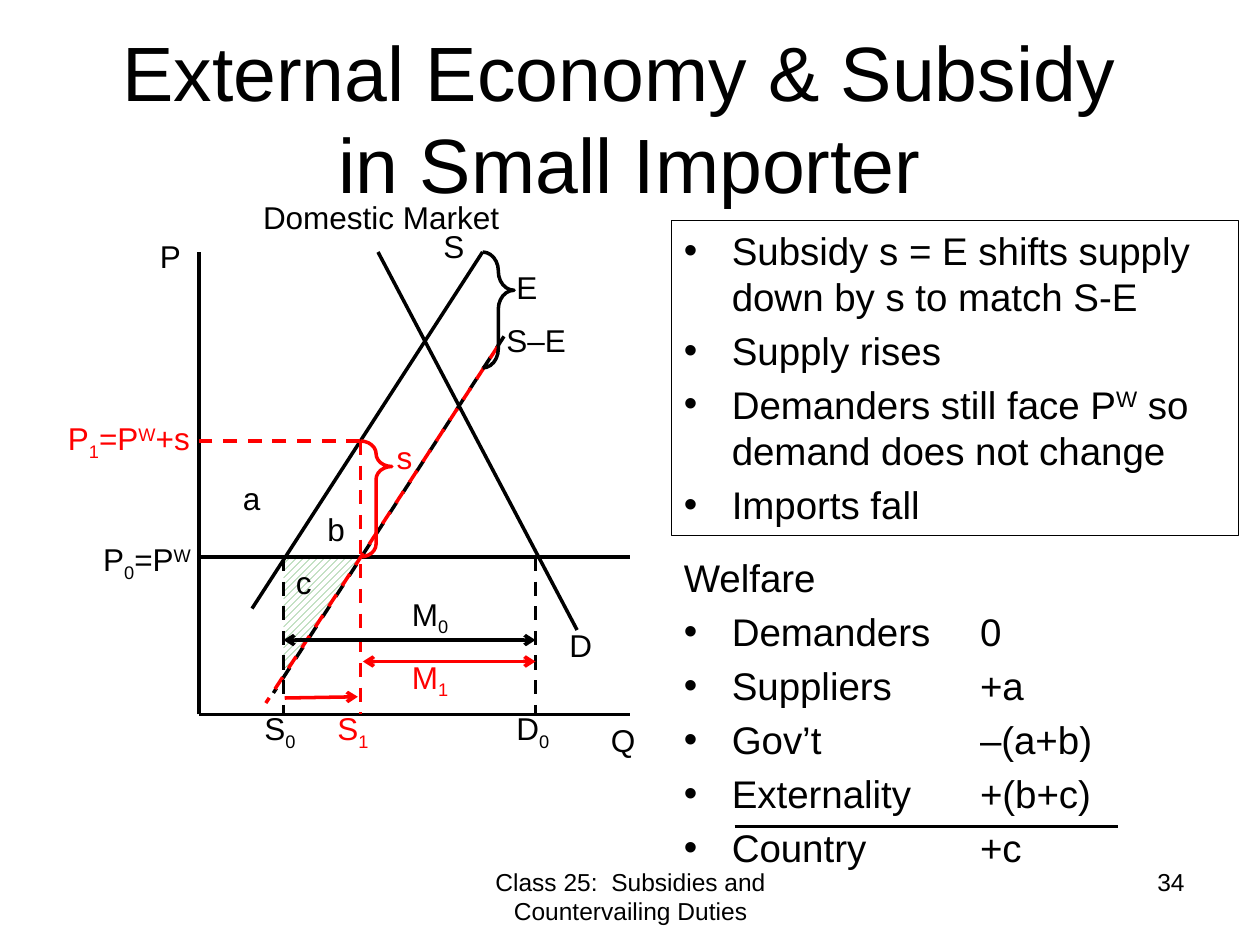
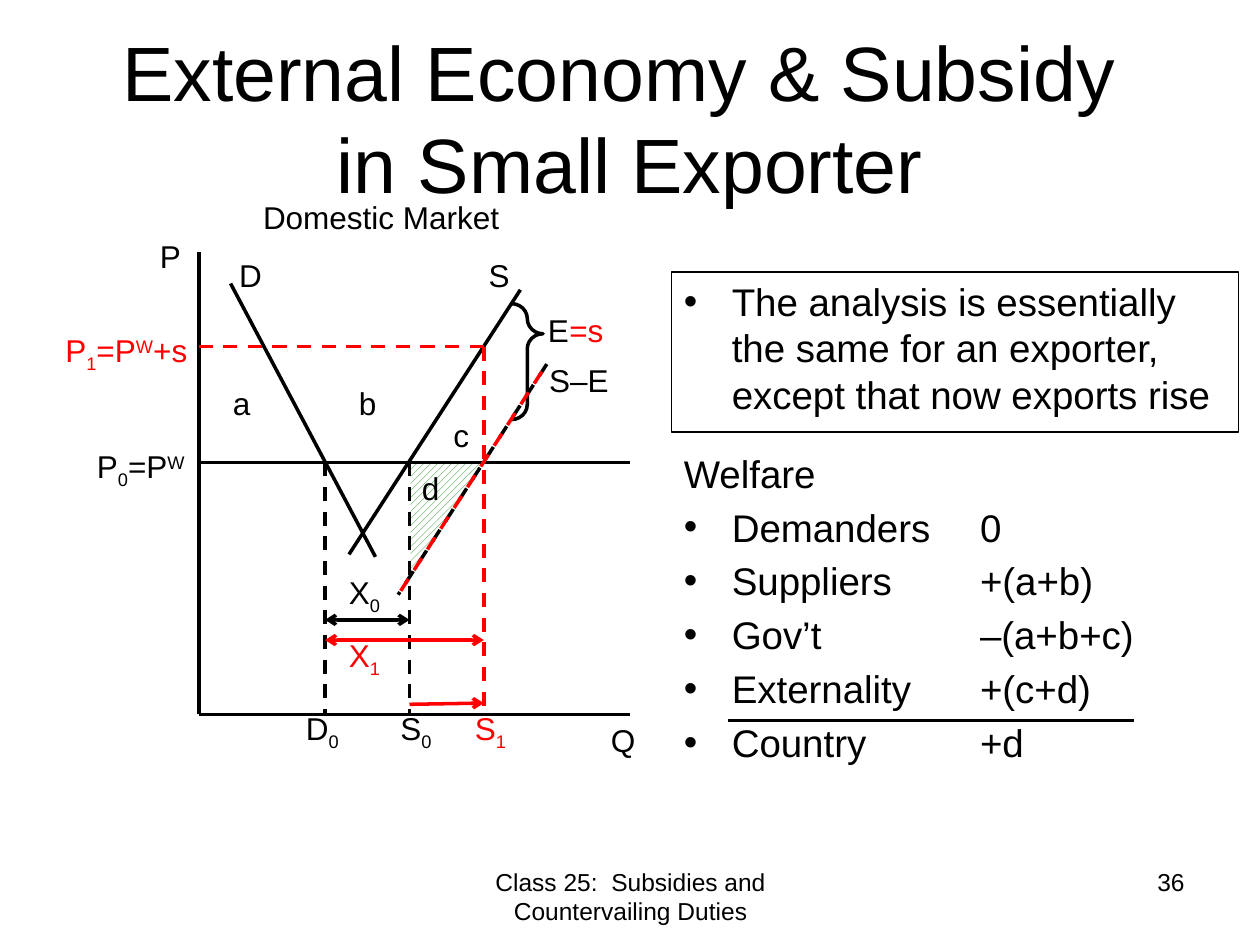
import lxml.etree
import pptx
import pptx.dml.color
import pptx.enum.dml
import pptx.enum.shapes
import pptx.enum.text
import pptx.oxml.ns
import pptx.util

Inches = pptx.util.Inches
Pt = pptx.util.Pt
qn = pptx.oxml.ns.qn
SHAPES = pptx.enum.shapes.MSO_SHAPE
ALIGN = pptx.enum.text.PP_ALIGN

COLORS = {"black": "000000", "red": "FF0000", "green": "008000", "white": "FFFFFF"}
FONT = "Arial"
BASELINES = {"_": "-25000", "^": "30000"}
INDENT = Inches(0.38)
AMOUNT_TAB = Inches(2.35)
ORIGIN_X, AXIS_TOP, AXIS_Y, AXIS_RIGHT = 1.58, 2, 5.67, 5
QUANTITY_Y = 5.58


def color(name):
    return pptx.dml.color.RGBColor.from_string(COLORS[name])


def add_xml(parent, tag, **attributes):
    return lxml.etree.SubElement(parent, qn(tag), attributes)


def split_scripts(text):
    """Yield (piece, baseline); "_" lowers and "^" raises the next character."""
    piece, baseline = "", None
    for character in text:
        if character in BASELINES:
            yield piece, None
            piece, baseline = "", BASELINES[character]
        elif baseline:
            yield character, baseline
            baseline = None
        else:
            piece += character
    if piece:
        yield piece, None


def write(paragraph, text, size=18, ink="black", align=ALIGN.LEFT, bullet=False, before=0):
    paragraph.alignment = align
    paragraph.space_before = Pt(before)
    for number, line in enumerate(text.split("\n")):
        if number:
            paragraph.add_line_break()
        for piece, baseline in split_scripts(line):
            run = paragraph.add_run()
            run.text = piece
            run.font.name = FONT
            run.font.size = Pt(size)
            run.font.color.rgb = color(ink)
            if baseline:
                run.font._element.set("baseline", baseline)
    if bullet:
        properties = paragraph._p.get_or_add_pPr()
        properties.set("marL", str(INDENT))
        properties.set("indent", str(-INDENT))
        add_xml(properties, "a:buFont", typeface=FONT)
        add_xml(properties, "a:buChar", char="•")
        if "\t" in text:
            tabs = add_xml(properties, "a:tabLst")
            add_xml(tabs, "a:tab", pos=str(AMOUNT_TAB), algn="l")


class MarketSlide:
    def __init__(self, presentation, title, number):
        self.slide = presentation.slides.add_slide(presentation.slide_layouts[6])
        self.text(title, 0.5, 0.3, 9, 1.25, size=44, align=ALIGN.CENTER, middle=True)
        self.text("Domestic Market", 1.63, 1.52, 2.79, align=ALIGN.CENTER)
        self.text("Class 25:  Subsidies and Countervailing Duties", 3.42, 6.83, 3.17, 0.52,
                  size=14, align=ALIGN.CENTER)
        self.text(str(number), 7.17, 6.83, 2.33, 0.52, size=14, align=ALIGN.RIGHT)

    def text(self, text, left, top, width=0.5, height=0.4, middle=False, wrap=True, **style):
        box = self.slide.shapes.add_textbox(*map(Inches, (left, top, width, height)))
        frame = box.text_frame
        frame.word_wrap = wrap
        if middle:
            frame.vertical_anchor = pptx.enum.text.MSO_ANCHOR.MIDDLE
        write(frame.paragraphs[0], text, **style)

    def areas(self, **places):
        """Letter the areas between the curves."""
        for letter, (left, top) in places.items():
            self.text(letter, left, top, 0.33)

    def quantity(self, text, left, top=QUANTITY_Y, ink="black"):
        width = {"S": 0.46, "D": 0.48, "M": 0.51, "X": 0.46}[text[0]]
        self.text(text, left, top, width, wrap=False, ink=ink)

    def line(self, x1, y1, x2, y2, ink="black", dash=False, arrows=()):
        """Draw a line; arrows holds "headEnd" for the start and "tailEnd" for the end."""
        connector = self.slide.shapes.add_connector(
            pptx.enum.shapes.MSO_CONNECTOR.STRAIGHT, *map(Inches, (x1, y1, x2, y2)))
        connector.line.color.rgb = color(ink)
        connector.line.width = Pt(2)
        if dash:
            connector.line.dash_style = pptx.enum.dml.MSO_LINE.DASH
        for end in arrows:
            add_xml(connector.line._get_or_add_ln(), "a:" + end, type="arrow")
        add_xml(connector._element.spPr, "a:effectLst")

    def span(self, x1, x2, y, ink="black"):
        self.line(x1, y, x2, y, ink, arrows=("headEnd", "tailEnd"))

    def shape(self, kind, left, top, width, height):
        shape = self.slide.shapes.add_shape(kind, *map(Inches, (left, top, width, height)))
        shape.shadow.inherit = False
        shape.fill.background()
        shape.line.fill.background()
        return shape

    def hatched_triangle(self, left, top, width, height):
        triangle = self.shape(SHAPES.RIGHT_TRIANGLE, left, top, width, height)
        triangle._element.spPr.get_or_add_xfrm().set("flipV", "1")
        triangle.fill.patterned()
        triangle.fill.pattern = pptx.enum.dml.MSO_PATTERN.WIDE_UPWARD_DIAGONAL
        triangle.fill.fore_color.rgb = color("green")
        triangle.fill.back_color.rgb = color("white")

    def brace(self, left, top, tip, ink="black"):
        brace = self.shape(SHAPES.RIGHT_BRACE, left, top, 0.25, 0.92)
        brace.adjustments[0], brace.adjustments[1] = 0.6, tip
        brace.line.color.rgb = color(ink)
        brace.line.width = Pt(2)

    def bullets(self, lines, top, height, heading=None, framed=False):
        box = self.shape(SHAPES.RECTANGLE, 5.33, top, 4.5, height)
        if framed:
            box.line.color.rgb = color("black")
            box.line.width = Pt(0.75)
        frame = box.text_frame
        frame.word_wrap = True
        frame.vertical_anchor = pptx.enum.text.MSO_ANCHOR.TOP
        paragraphs = ([heading] if heading else []) + lines
        for number, text in enumerate(paragraphs):
            paragraph = frame.add_paragraph() if number else frame.paragraphs[0]
            write(paragraph, text, size=22, bullet=text != heading, before=4.4)

    def welfare(self, top, rule, suppliers, government, externality, country):
        amounts = {"Demanders": "0", "Suppliers": suppliers, "Gov’t": government,
                   "Externality": externality, "Country": country}
        self.bullets([f"{who}\t{amount}" for who, amount in amounts.items()],
                     top, 2.5, heading="Welfare")
        left, right, y = rule
        self.line(left, y, right, y)

    def axes(self, world_price):
        self.line(ORIGIN_X, AXIS_Y, AXIS_RIGHT, AXIS_Y)
        self.line(ORIGIN_X, AXIS_Y, ORIGIN_X, AXIS_TOP)
        self.line(ORIGIN_X, world_price, AXIS_RIGHT, world_price)
        self.text("P", 1.17, 1.83, 0.75)
        self.text("Q", 4.75, 5.67, 0.75)

    def drop(self, x, price, ink="black"):
        """Dashed line from a price down to the quantity axis."""
        self.line(x, price, x, AXIS_Y, ink, dash=True)

    def subsidized_price(self, x, price):
        self.drop(x, price, "red")
        self.line(x, price, ORIGIN_X, price, "red", dash=True)

    def shifted_supply(self, social, subsidized):
        self.line(*social, dash=True)
        self.line(*subsidized, ink="red", dash=True)

    def prices(self, initial, subsidized):
        self.text("P_0=P^W", *initial, 0.98)
        self.text("P_1=P^W+s", *subsidized, 1.24, ink="red")


def build_importer(presentation):
    price, raised_price = 4.42, 3.5
    supply, raised_supply, demand = 2.25, 2.86, 4.25
    market = MarketSlide(presentation, "External Economy & Subsidy \nin Small Importer", 34)
    market.hatched_triangle(supply, price, 0.61, 0.96)
    market.bullets(["Subsidy s = E shifts supply down by s to match S-E", "Supply rises",
                    "Demanders still face P^W so demand does not change", "Imports fall"],
                   1.75, 2.5, framed=True)
    market.welfare(4.35, (5.83, 8.87, 6.56), "+a", "–(a+b)", "+(b+c)", "+c")
    market.axes(price)
    market.line(3.83, 2, 2, 4.83)
    market.line(4.58, 5, 3, 2)
    market.shifted_supply((4, 2.67, 2.17, 5.5), (3.95, 2.75, 2.11, 5.58))
    market.brace(3.83, 2, 0.33)
    market.brace(raised_supply, raised_price, 0.22, "red")
    market.drop(supply, price)
    market.drop(demand, price)
    market.subsidized_price(raised_supply, raised_price)
    market.span(supply, demand, 5.08)
    market.span(2.88, demand, 5.25, "red")
    market.line(2.26, 5.54, 2.84, 5.53, "red", arrows=("tailEnd",))
    market.prices((0.72, 4.24), (0.44, 3.28))
    market.text("S", 3.42, 1.75)
    market.text("D", 4.42, 4.92)
    market.text("E", 4, 2.08)
    market.text("S–E", 3.92, 2.5, 0.73)
    market.text("s", 3.05, 3.43, 0.33, ink="red")
    market.areas(a=(1.83, 3.75), b=(2.5, 4), c=(2.25, 4.42))
    market.quantity("S_0", 2)
    market.quantity("S_1", 2.58, ink="red")
    market.quantity("D_0", 4)
    market.quantity("M_0", 3.17, 4.67)
    market.quantity("M_1", 3.17, 5.17, "red")


def build_exporter(presentation):
    price, raised_price = 3.67, 2.75
    demand, supply, raised_supply = 2.58, 3.25, 3.84
    market = MarketSlide(presentation, "External Economy & Subsidy \nin Small Exporter", 36)
    market.hatched_triangle(3.26, price, 0.59, 0.92)
    market.bullets(["The analysis is essentially the same for an exporter, "
                    "except that now exports rise"], 2.16, 1.27, framed=True)
    market.welfare(3.52, (5.78, 9, 5.72), "+(a+b)", "–(a+b+c)", "+(c+d)", "+d")
    market.axes(price)
    market.line(4.13, 2.3, 2.77, 4.4)
    market.line(2.98, 4.42, 1.83, 2.25)
    market.brace(4.06, 2.41, 0.26)
    market.shifted_supply((4.34, 2.89, 3.16, 4.72), (4.3, 2.95, 3.18, 4.69))
    market.drop(demand, price)
    market.drop(supply, price)
    market.subsidized_price(raised_supply, raised_price)
    market.span(demand, supply, 4.92)
    market.span(demand, raised_supply, 5.08, "red")
    market.line(supply, 5.59, raised_supply, 5.58, "red", arrows=("tailEnd",))
    market.prices((0.67, 3.5), (0.42, 2.58))
    market.text("D", 1.8, 1.98)
    market.text("S", 3.78, 1.98)
    market.text("E", 4.25, 2.42, 0.92)
    market.text("=s", 4.42, 2.42, ink="red")
    market.text("S–E", 4.26, 2.82, 0.73)
    market.areas(a=(1.75, 3), b=(2.75, 3), c=(3.5, 3.25), d=(3.25, 3.67))
    market.quantity("D_0", 2.33)
    market.quantity("S_0", 3.08)
    market.quantity("S_1", 3.67, ink="red")
    market.quantity("X_0", 2.67, 4.5)
    market.quantity("X_1", 2.67, 5, "red")


def main():
    presentation = pptx.Presentation()
    presentation.slide_width = Inches(10)
    presentation.slide_height = Inches(7.5)
    build_importer(presentation)
    build_exporter(presentation)
    presentation.save("out.pptx")


if __name__ == "__main__":
    main()
